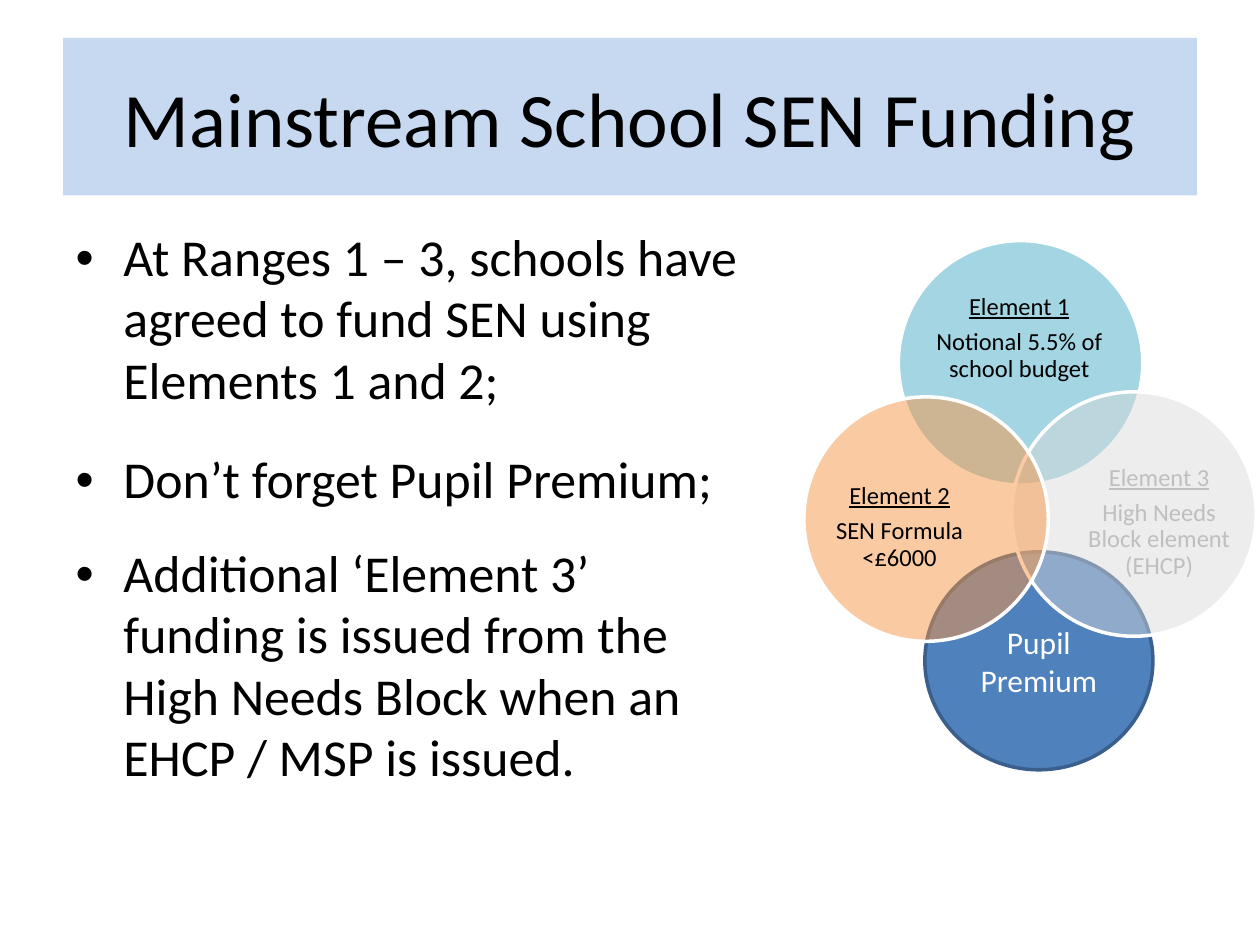
from lxml import etree
from pptx import Presentation
from pptx import util as u
from pptx.dml import color
from pptx.enum import shapes, text
from pptx.oxml import ns

COLORS = {
    "black": "000000", "white": "FFFFFF", "banner": "C6D9F1",
    "teal": "4BACC6", "orange": "F79646", "grey": "D9D9D9",
    "faded": "BFBFBF", "blue": "4F81BD", "navy": "3A5F8C",
}
CIRCLE_SIZE = 1.94
ELEMENTS = [
    ("Element 1", "Notional 5.5% of school budget", "teal", 50, "black",
     (0.75, 0), (0.25, 0.34, 1.42, 0.87)),
    ("Element 3", "High Needs Block element (EHCP)", "grey", 47, "faded",
     (1.65, 1.2), (0.59, 0.5, 1.16, 1.07)),
    ("Element 2", "SEN Formula <£6000", "orange", 50, "black",
     (0, 1.24), (0.18, 0.5, 1.16, 1.07)),
]
POINTS = [
    ("At Ranges 1 – 3, schools have agreed to fund SEN using Elements 1 and 2;", 0),
    ("Don’t forget Pupil Premium;", 21.5),
    ("Additional ‘Element 3’ funding is issued from the High Needs Block "
     "when an EHCP / MSP is issued.", 18.5),
]


def rgb(name):
    return color.RGBColor.from_string(COLORS[name])


def inches(*lengths):
    return [u.Inches(length) for length in lengths]


def place(item, box):
    item.left, item.top, item.width, item.height = inches(*box)


def write(para, words, size, ink="black", align=text.PP_ALIGN.CENTER,
          underline=None, before=0, after=0, spacing=None):
    para.alignment = align
    para.space_before, para.space_after = u.Pt(before), u.Pt(after)
    if spacing:
        para.line_spacing = spacing
    span = para.add_run()
    span.text = words
    span.font.name = "Calibri"
    span.font.size = u.Pt(size)
    span.font.color.rgb = rgb(ink)
    span.font.underline = underline


def add_paragraph(frame, index):
    return frame.add_paragraph() if index else frame.paragraphs[0]


def add_bullet(para, indent):
    props = para._p.get_or_add_pPr()
    props.set("marL", str(u.Inches(indent)))
    props.set("indent", str(-u.Inches(indent)))
    etree.SubElement(props, ns.qn("a:buFont"), typeface="Arial")
    etree.SubElement(props, ns.qn("a:buChar"), char="•")


def add_circle(holder, box, fill, line, opacity=100):
    circle = holder.add_shape(shapes.MSO_SHAPE.OVAL, *inches(*box))
    circle.shadow.inherit = False
    circle.fill.solid()
    circle.fill.fore_color.rgb = rgb(fill)
    if opacity < 100:
        tint = circle.fill._xPr.find(".//" + ns.qn("a:srgbClr"))
        etree.SubElement(tint, ns.qn("a:alpha"), val=str(opacity * 1000))
    circle.line.color.rgb = rgb(line)
    circle.line.width = u.Pt(2)
    return circle


def add_title(page, box):
    title = page.shapes.title
    place(title, box)
    title.fill.solid()
    title.fill.fore_color.rgb = rgb("banner")
    frame = title.text_frame
    frame.vertical_anchor = text.MSO_ANCHOR.MIDDLE
    write(frame.paragraphs[0], "Mainstream School SEN Funding", 44)


def add_points(page, box):
    body = page.placeholders[1]
    place(body, box)
    frame = body.text_frame
    frame.auto_size = text.MSO_AUTO_SIZE.NONE
    for index, (words, gap) in enumerate(POINTS):
        para = add_paragraph(frame, index)
        add_bullet(para, 0.38)
        write(para, words, 29.6, align=text.PP_ALIGN.LEFT, before=gap, spacing=0.99)


def add_caption(holder, box, heading, detail, ink):
    frame = holder.add_textbox(*inches(*box)).text_frame
    frame.word_wrap = True
    frame.vertical_anchor = text.MSO_ANCHOR.MIDDLE
    frame.margin_left = frame.margin_right = 0
    frame.margin_top = frame.margin_bottom = 0
    for index, words in enumerate((heading, detail)):
        write(add_paragraph(frame, index), words, 14, ink,
              underline=index == 0, after=4.9, spacing=0.9)


def add_premium(page, box):
    circle = add_circle(page.shapes, box, "blue", "navy")
    frame = circle.text_frame
    frame.word_wrap = True
    frame.vertical_anchor = text.MSO_ANCHOR.MIDDLE
    write(frame.paragraphs[0], "Pupil Premium", 18, "white")


def add_venn(page, left, top):
    add_premium(page, (left + 0.96, top + 2.47, 1.81, 1.73))
    holder = page.shapes.add_group_shape().shapes
    for heading, detail, fill, opacity, ink, offset, inset in ELEMENTS:
        x, y = left + offset[0], top + offset[1]
        add_circle(holder, (x, y, CIRCLE_SIZE, CIRCLE_SIZE), fill, "white", opacity)
        label_x, label_y, width, height = inset
        add_caption(holder, (x + label_x, y + label_y, width, height),
                    heading, detail, ink)


def main():
    deck = Presentation()
    deck.slide_width, deck.slide_height = inches(10, 7.5)
    page = deck.slides.add_slide(deck.slide_layouts[1])
    add_title(page, (0.5, 0.3, 9, 1.25))
    add_points(page, (0.5, 1.75, 5.52, 4.95))
    add_venn(page, 6.38, 1.91)
    deck.save("out.pptx")


if __name__ == "__main__":
    main()
